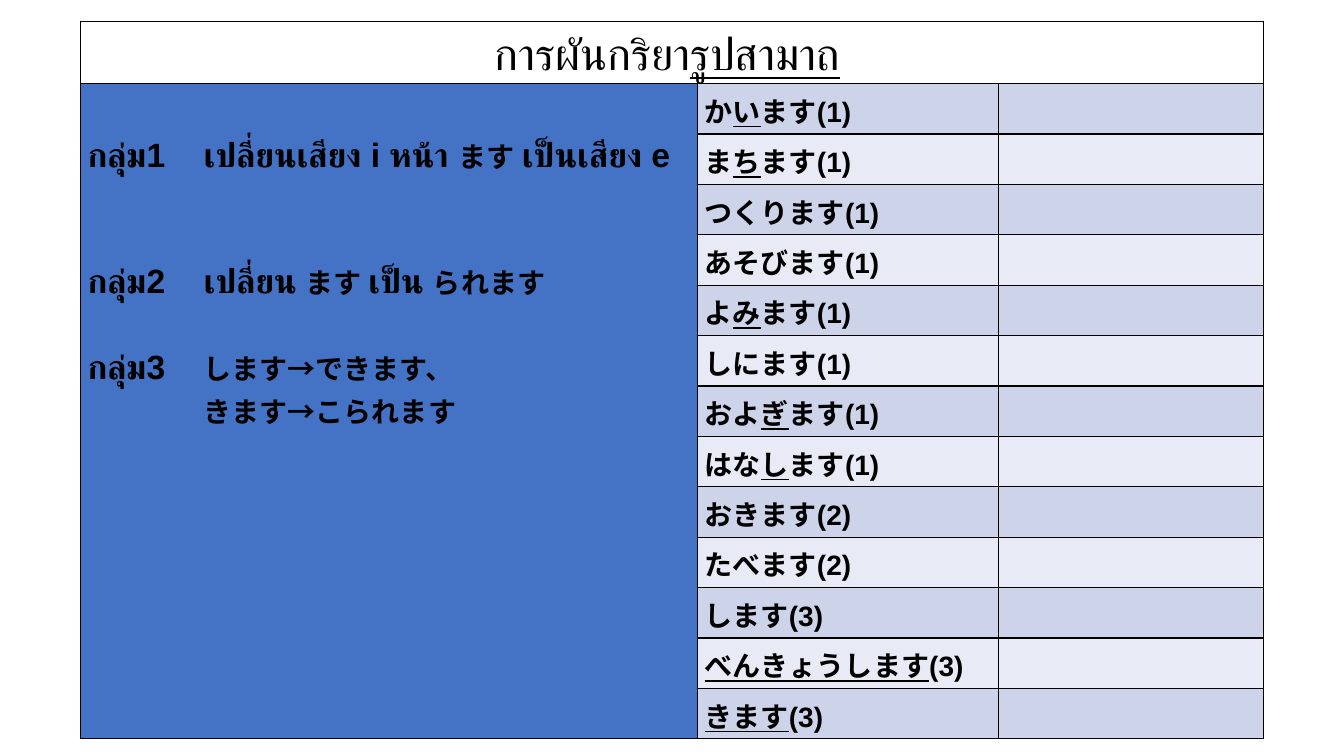
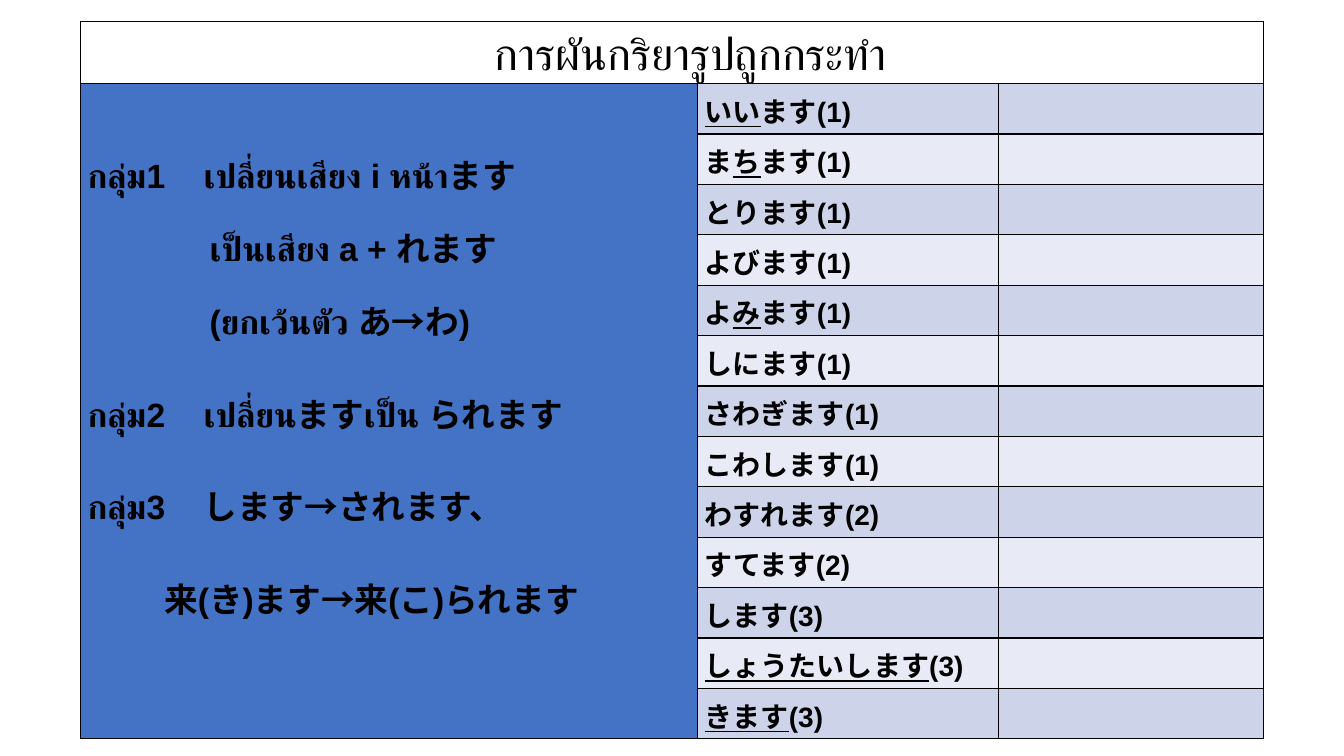
from pptx import Presentation
from pptx.dml.color import RGBColor
from pptx.enum.text import MSO_AUTO_SIZE
from pptx.oxml import parse_xml
from pptx.oxml.ns import nsdecls
from pptx.util import Inches, Pt

BLACK = RGBColor(0x00, 0x00, 0x00)
WHITE = RGBColor(0xFF, 0xFF, 0xFF)
BLUE = RGBColor(0x44, 0x72, 0xC4)
BANDS = (RGBColor(0xCD, 0xD4, 0xEA), RGBColor(0xE8, 0xEB, 0xF5))

FONT = "Arial"
LEFT, TOP = 0.8, 0.21
COLUMNS = (6.12, 2.98, 2.63)
TITLE_ROW, VERB_ROW = 0.62, 0.5
TITLE_BOX = (4.81, 0.21, 5.74, 0.64)
RULE_INDENT = 1.15

LESSONS = [
    {
        "title": "การผันกริยา_รูปสามาถ_",
        "rules": [
            {"runs": [("กลุ่ม1\tเปลี่ยนเสียง i หน้า ", 24), ("ます", 20), (" เป็นเสียง e", 24)]},
            {"before": 58, "runs": [("กลุ่ม2\tเปลี่ยน ", 24), ("ます ", 20),
                                    ("เป็น ", 24), ("られます", 20)]},
            {"before": 30, "runs": [("กลุ่ม3\t", 24), ("します→できます、", 20)]},
            {"runs": [("きます→こられます", 20)]},
        ],
        "verbs": ["か_い_ます(1)", "ま_ち_ます(1)", "つくります(1)", "あそびます(1)",
                  "よ_み_ます(1)", "しにます(1)", "およ_ぎ_ます(1)", "はな_し_ます(1)",
                  "おきます(2)", "たべます(2)", "します(3)", "_べんきょうします_(3)",
                  "_きます_(3)"],
    },
    {
        "title": "การผันกริยารูปถูกกระทำ",
        "rules": [
            {"spacing": 1.5, "runs": [("กลุ่ม1\tเปลี่ยนเสียง i หน้าます", 24)]},
            {"spacing": 1.5, "indent": 1.21, "runs": [("เป็นเสียง a + れます", 24)]},
            {"spacing": 1.5, "indent": 1.21, "runs": [("(ยกเว้นตัว あ→わ)", 24)]},
            {"before": 29, "runs": [("กลุ่ม2\tเปลี่ยนますเป็น られます", 24)]},
            {"before": 29, "runs": [("กลุ่ม3\tします→されます、", 24)]},
            {"before": 29, "indent": 0.76, "runs": [("来(き)ます→来(こ)られます", 24)]},
        ],
        "verbs": ["_いい_ます(1)", "ま_ち_ます(1)", "とります(1)", "よびます(1)",
                  "よ_み_ます(1)", "しにます(1)", "さわぎます(1)", "こわします(1)",
                  "わすれます(2)", "すてます(2)", "します(3)", "_しょうたいします_(3)",
                  "_きます_(3)"],
    },
]


def apply(target, values):
    for name, value in values.items():
        setattr(target, name, value)


def add_run(paragraph, text, size, **values):
    run = paragraph.add_run()
    run.text = text
    apply(run.font, {"name": FONT, "size": Pt(size), **values})
    run.font.color.rgb = BLACK


def add_marked_text(paragraph, text, size, **values):
    for index, part in enumerate(text.split("_")):
        if part:
            underline = {"underline": True} if index % 2 else {}
            add_run(paragraph, part, size, **underline, **values)


def style_cell(cell, color):
    apply(cell, {"margin_left": Inches(0.07), "margin_right": Inches(0.07),
                 "margin_top": 0, "margin_bottom": 0})
    properties = cell._tc.get_or_add_tcPr()
    for side in ("lnL", "lnR", "lnT", "lnB"):
        properties.append(parse_xml(
            f'<a:{side} {nsdecls("a")} w="12700"><a:solidFill>'
            f'<a:srgbClr val="{BLACK}"/></a:solidFill></a:{side}>'))
    cell.fill.solid()
    cell.fill.fore_color.rgb = color


def fill_rules(cell, rules):
    cell.margin_top = Inches(0.41)
    frame = cell.text_frame
    for index, rule in enumerate(rules):
        paragraph = frame.add_paragraph() if index else frame.paragraphs[0]
        apply(paragraph, {"line_spacing": rule.get("spacing", 1.07),
                          "space_before": Pt(rule.get("before", 0))})
        indent = Inches(rule.get("indent", RULE_INDENT))
        hanging = "\t" in rule["runs"][0][0]
        properties = paragraph._p.get_or_add_pPr()
        properties.set("marL", str(indent))
        properties.set("indent", str(-indent if hanging else 0))
        for text, size in rule["runs"]:
            add_run(paragraph, text, size, bold=True)


def add_lesson_table(slide, lesson):
    verbs = lesson["verbs"]
    heights = [TITLE_ROW] + [VERB_ROW] * len(verbs)
    table = slide.shapes.add_table(
        len(heights), len(COLUMNS), Inches(LEFT), Inches(TOP),
        Inches(sum(COLUMNS)), Inches(sum(heights))).table
    apply(table, {"first_row": False, "horz_banding": False})
    for column, width in zip(table.columns, COLUMNS):
        column.width = Inches(width)
    for row_index, (row, height) in enumerate(zip(table.rows, heights)):
        row.height = Inches(height)
        for column_index, cell in enumerate(row.cells):
            band = BANDS[(row_index - 1) % 2]
            color = WHITE if row_index == 0 else BLUE if column_index == 0 else band
            style_cell(cell, color)
    table.cell(0, 0).merge(table.cell(0, len(COLUMNS) - 1))
    table.cell(1, 0).merge(table.cell(len(verbs), 0))
    fill_rules(table.cell(1, 0), lesson["rules"])
    for row_index, verb in enumerate(verbs, 1):
        paragraph = table.cell(row_index, 1).text_frame.paragraphs[0]
        paragraph.line_spacing = 1.15
        add_marked_text(paragraph, verb, 20, bold=True)


def add_title(slide, title):
    frame = slide.shapes.add_textbox(*map(Inches, TITLE_BOX)).text_frame
    apply(frame, {"word_wrap": True, "auto_size": MSO_AUTO_SIZE.SHAPE_TO_FIT_TEXT})
    add_marked_text(frame.paragraphs[0], title, 32)


def main():
    presentation = Presentation()
    apply(presentation, {"slide_width": Inches(13.33), "slide_height": Inches(7.5)})
    for lesson in LESSONS:
        slide = presentation.slides.add_slide(presentation.slide_layouts[6])
        add_lesson_table(slide, lesson)
        add_title(slide, lesson["title"])
    presentation.save("out.pptx")


if __name__ == "__main__":
    main()
